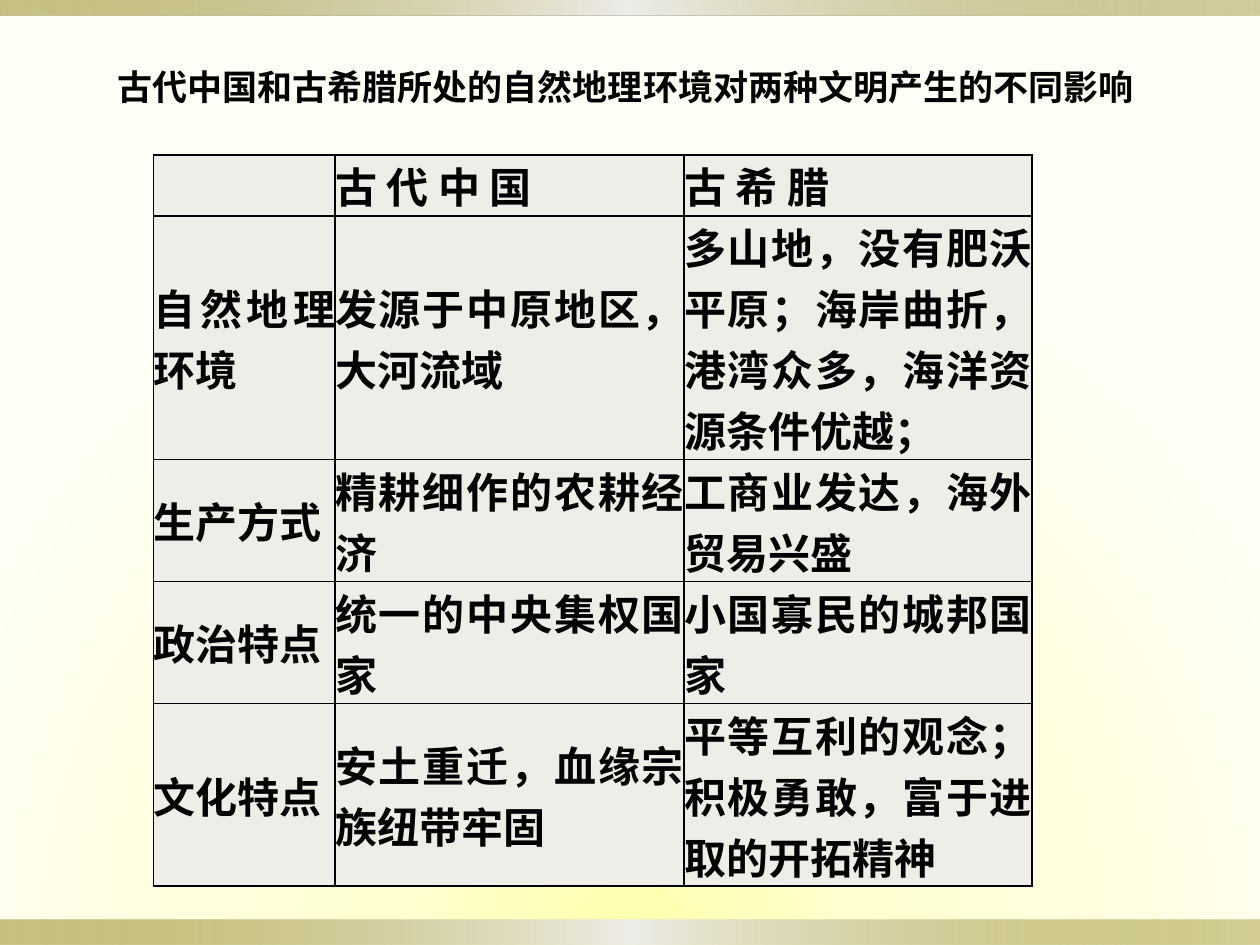
"""Build a slide comparing how geography shaped ancient China and ancient Greece."""
from dataclasses import dataclass

from lxml import etree
from pptx import Presentation
from pptx.dml.color import RGBColor
from pptx.enum.shapes import MSO_SHAPE
from pptx.enum.text import MSO_ANCHOR, MSO_AUTO_SIZE, PP_ALIGN
from pptx.oxml import parse_xml
from pptx.oxml.ns import nsdecls, qn
from pptx.util import Inches, Pt


@dataclass(frozen=True)
class Theme:
    ink: str = "000000"
    cell: str = "EEEDE8"
    bar: str = "918415"
    glow: tuple = ((0, "FFFFAC", 100), (31, "FFFFD2", 100), (100, "FFFFF7", 100))
    title_font: str = "Times New Roman"
    table_font: str = "Arial"
    title_size: int = 20
    table_size: int = 24
    border: int = 1


def set_gradient(properties, stops, direction):
    marks = "".join(
        f'<a:gs pos="{place * 1000}"><a:srgbClr val="{colour}">'
        f'<a:alpha val="{opacity * 1000}"/></a:srgbClr></a:gs>'
        for place, colour, opacity in stops)
    gradient = parse_xml(f'<a:gradFill {nsdecls("a")} rotWithShape="1">'
                         f"<a:gsLst>{marks}</a:gsLst>{direction}</a:gradFill>")
    properties.replace(properties.find(qn("a:solidFill")), gradient)


def style_paragraph(paragraph, family, size, alignment):
    paragraph.alignment = alignment
    paragraph.font.name = family
    paragraph.font.size = Pt(size)
    paragraph.font.bold = True
    paragraph.font.color.rgb = RGBColor.from_string(theme.ink)


theme = Theme()
deck = Presentation()
deck.slide_width, deck.slide_height = Inches(10), Inches(7.5)
width, height = deck.slide_width, deck.slide_height
slide = deck.slides.add_slide(deck.slide_layouts[5])

slide.background.fill.solid()
set_gradient(slide.element.find(".//" + qn("p:bgPr")), theme.glow,
             '<a:path path="circle"><a:fillToRect l="50000" t="150000" r="50000" b="0"/></a:path>')

bar_stops = ((0, theme.bar, 50), (50, theme.cell, 100), (100, theme.bar, 40))
for top, depth in ((7.3, 0.2), (0, 0.12)):
    bar = slide.shapes.add_shape(MSO_SHAPE.RECTANGLE, 0, Inches(top), width, Inches(depth))
    bar.shadow.inherit = False
    bar.line.fill.background()
    bar.fill.solid()
    set_gradient(bar.element.spPr, bar_stops, '<a:lin ang="0" scaled="1"/>')

heading = slide.shapes.title
heading.left, heading.top = Inches(0.83), Inches(0.47)
heading.width, heading.height = Inches(8.46), Inches(0.44)
heading.text_frame.text = "古代中国和古希腊所处的自然地理环境对两种文明产生的不同影响"
heading.text_frame.word_wrap = True
heading.text_frame.auto_size = MSO_AUTO_SIZE.NONE
heading.text_frame.vertical_anchor = MSO_ANCHOR.MIDDLE
style_paragraph(heading.text_frame.paragraphs[0], theme.title_font, theme.title_size, PP_ALIGN.LEFT)

comparison = (
    ("", "古 代 中 国", "古 希 腊"),
    ("自然地理环境", "发源于中原地区，大河流域",
     "多山地，没有肥沃平原；海岸曲折，港湾众多，海洋资源条件优越；"),
    ("生产方式", "精耕细作的农耕经济", "工商业发达，海外贸易兴盛"),
    ("政治特点", "统一的中央集权国家", "小国寡民的城邦国家"),
    ("文化特点", "安土重迁，血缘宗族纽带牢固", "平等互利的观念；积极勇敢，富于进取的开拓精神"),
)
column_widths = (1.44, 2.77, 2.76)
lines_per_row = (1, 4, 2, 2, 3)
line_height = 0.48

table = slide.shapes.add_table(
    len(comparison), len(column_widths), Inches(1.22), Inches(1.23),
    Inches(sum(column_widths)), Inches(line_height * sum(lines_per_row))).table
table.first_row = table.horz_banding = False
for column, share in zip(table.columns, column_widths):
    column.width = Inches(share)

for row, lines, entries in zip(table.rows, lines_per_row, comparison):
    row.height = Inches(line_height * lines)
    for cell, entry in zip(row.cells, entries):
        cell.text = entry
        cell.margin_left = cell.margin_right = cell.margin_top = cell.margin_bottom = 0
        cell.vertical_anchor = MSO_ANCHOR.MIDDLE
        style_paragraph(cell.text_frame.paragraphs[0], theme.table_font,
                        theme.table_size, PP_ALIGN.JUSTIFY)
        cell.fill.solid()
        cell.fill.fore_color.rgb = RGBColor.from_string(theme.cell)
        cell_properties = cell._tc.get_or_add_tcPr()
        for position, side in enumerate(("lnL", "lnR", "lnT", "lnB")):
            edge = etree.Element(qn(f"a:{side}"), w=str(Pt(theme.border)))
            ink = etree.SubElement(edge, qn("a:solidFill"))
            etree.SubElement(ink, qn("a:srgbClr"), val=theme.ink)
            cell_properties.insert(position, edge)

deck.save("out.pptx")
